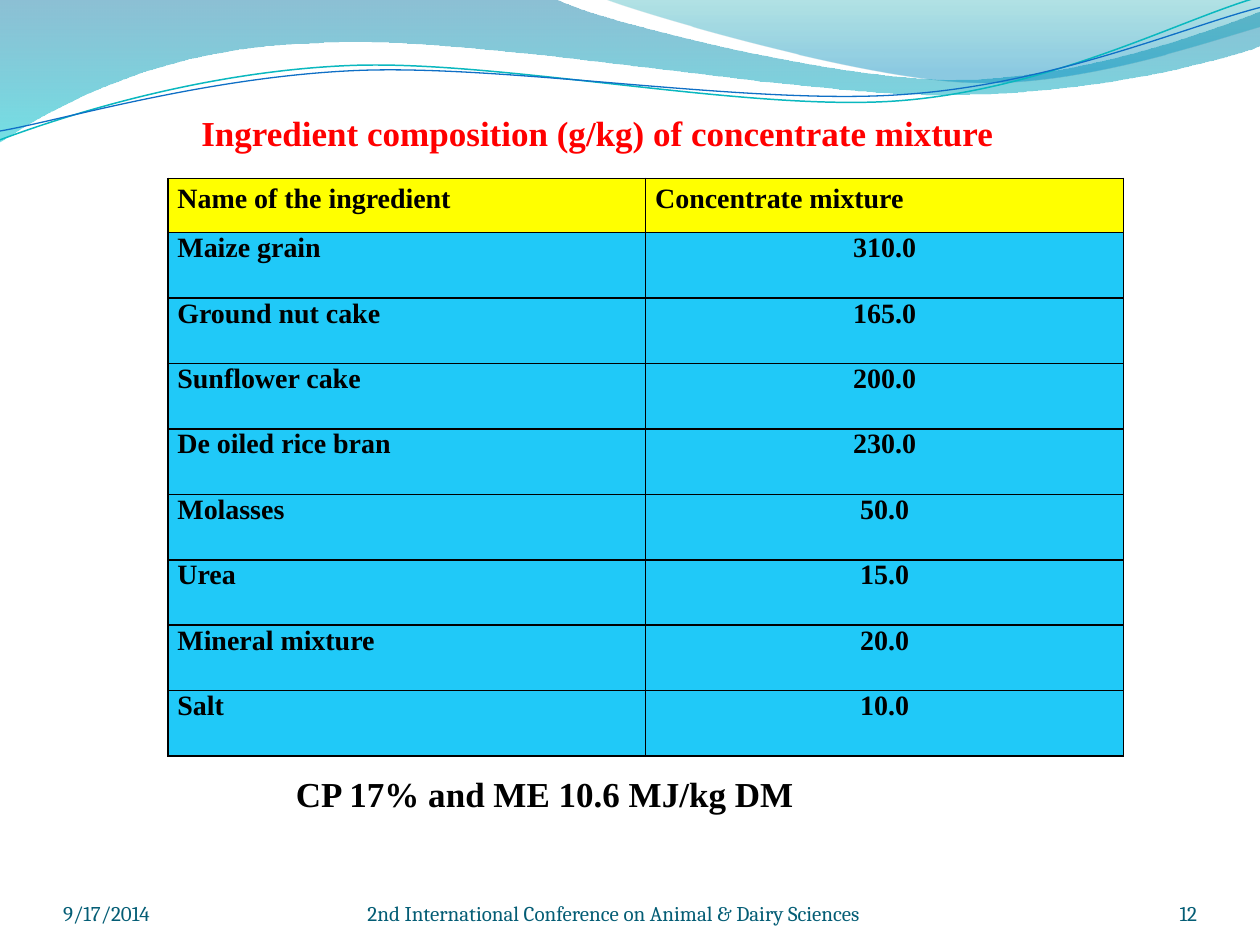
import math

from lxml import etree
from pptx import Presentation
from pptx import util as u
from pptx.dml.color import RGBColor
from pptx.enum import text
from pptx.oxml import ns

CELL = u.Inches(1) // 12
BLACK = RGBColor(0x00, 0x00, 0x00)
RED = RGBColor(0xFF, 0x00, 0x00)
YELLOW = RGBColor(0xFF, 0xFF, 0x00)
SKY = RGBColor(0x20, 0xC9, 0xF8)
FOOTER_BLUE = RGBColor(0x04, 0x5D, 0x75)
OCEAN = RGBColor(0x00, 0x74, 0xA1)
AQUA = RGBColor(0x00, 0xC6, 0xCF)
TEAL = RGBColor(0x00, 0xA1, 0xA9)
AZURE = RGBColor(0x00, 0x8B, 0xBF)
LINE_TEAL = RGBColor(0x0A, 0xB8, 0xBF)
LINE_BLUE = RGBColor(0x0F, 0x6F, 0xC6)
SERIF = "Times New Roman"
ALIGN = text.PP_ALIGN
TILT = -2.7

BANDS = [
    ([(0, 0), (4.4, -0.01),
      (4.76, 0.17, 6.64, 0.63, 7.58, 0.63), (8.53, 0.63, 9.58, 0.26, 10, 0.09),
      (10.01, 0.36),
      (9.83, 0.44, 8.7, 0.76, 7.46, 0.75), (6.22, 0.75, 3.82, 0.28, 2.57, 0.34),
      (1.29, 0.36, 0.46, 0.83, -0.01, 1.13), (0, 0)],
     [(0, OCEAN, 45), (1, AQUA, 55)]),
    ([(4.79, -0.01),
      (5.09, 0.11, 6.82, 0.62, 7.69, 0.65), (8.56, 0.69, 9.61, 0.32, 10, 0.21),
      (10, 0), (4.79, -0.01)],
     [(0, TEAL, 30), (0.8, AZURE, 45)]),
]
STRANDS = [
    ([(0, 1.11), (0.48, 0.93, 1.58, 0.57, 2.77, 0.52),
      (3.95, 0.47, 5.93, 0.89, 7.13, 0.8), (8.33, 0.71, 9.38, 0.15, 9.98, -0.02)],
     (4.99, 0.58), LINE_TEAL, 0.85),
    ([(0, 1.04), (0.47, 0.96, 1.64, 0.61, 2.83, 0.56),
      (4.03, 0.51, 5.97, 0.84, 7.17, 0.75), (8.36, 0.67, 9.41, 0.21, 10, 0.06)],
     (5, 0.59), LINE_BLUE, 0.75),
]
HEADINGS = ("Name of the ingredient", "Concentrate mixture")
INGREDIENTS = [
    ("Maize grain", "310.0"), ("Ground nut cake", "165.0"),
    ("Sunflower cake", "200.0"), ("De oiled rice bran", "230.0"),
    ("Molasses", "50.0"), ("Urea", "15.0"),
    ("Mineral mixture", "20.0"), ("Salt", "10.0"),
]


def grid(*cells):
    """Turn grid columns and rows into slide lengths."""
    return [u.Emu(round(n * CELL)) for n in cells]


def turn(outline, pivot, degrees):
    """Rotate every point of an outline clockwise about a pivot."""
    cos, sin = math.cos(math.radians(degrees)), math.sin(math.radians(degrees))
    turned = []
    for part in outline:
        offsets = [(x - pivot[0], y - pivot[1]) for x, y in zip(part[::2], part[1::2])]
        turned.append([n for x, y in offsets for n in
                       (pivot[0] + x * cos - y * sin, pivot[1] + x * sin + y * cos)])
    return turned


def add_outline(slide, box, outline, close):
    """Draw corners and cubic curves measured in tenths of the box width."""
    left, top, width, _ = box
    points = [(round(left + x * width / 10), round(top + y * width / 10))
              for part in outline for x, y in zip(part[::2], part[1::2])]
    builder = slide.shapes.build_freeform(*points[0])
    builder.add_line_segments(points[1:], close=close)
    shape = builder.convert_to_shape()
    shape.shadow.inherit = False
    segments = iter(list(shape.element.iter(ns.qn("a:lnTo"))))
    for part in outline[1:]:
        first = next(segments)
        if len(part) == 6:
            first.tag = ns.qn("a:cubicBezTo")
            for bend in (next(segments), next(segments)):
                first.append(bend[0])
                bend.getparent().remove(bend)
    return shape


def add_waves(slide, box):
    """Place the tinted bands and thin strands across the top."""
    for outline, stops in BANDS:
        band = add_outline(slide, box, outline, True)
        band.line.fill.background()
        band.fill.gradient()
        band.fill.gradient_angle = 270
        for stop, (position, color, _) in zip(band.fill.gradient_stops, stops):
            stop.position = position
            stop.color.rgb = color
        for tint, (_, _, opacity) in zip(band.element.spPr.iter(ns.qn("a:srgbClr")), stops):
            etree.SubElement(tint, ns.qn("a:alpha"), val=str(opacity * 1000))
    for outline, pivot, color, weight in STRANDS:
        strand = add_outline(slide, box, turn(outline, pivot, -TILT), False)
        strand.rotation = TILT
        strand.fill.background()
        strand.line.color.rgb = color
        strand.line.width = u.Pt(weight)


def write(frame, words, size, color, font=SERIF, bold=True, align=ALIGN.LEFT):
    """Fill a text frame with one styled paragraph."""
    frame.text = words
    paragraph = frame.paragraphs[0]
    paragraph.alignment = align
    style = paragraph.runs[0].font
    style.name, style.size, style.bold = font, u.Pt(size), bold
    style.color.rgb = color
    return paragraph


def add_caption(slide, box, words, color):
    """Place a bold line of text above or below the table."""
    frame = slide.shapes.add_textbox(*box).text_frame
    frame.word_wrap = True
    frame.auto_size = text.MSO_AUTO_SIZE.SHAPE_TO_FIT_TEXT
    write(frame, words, 20, color)


def add_border(cell):
    """Draw a thin black line on every side of a cell."""
    for side in ("a:lnL", "a:lnR", "a:lnT", "a:lnB"):
        line = etree.SubElement(cell._tc.get_or_add_tcPr(), ns.qn(side), w=str(u.Pt(1)))
        fill = etree.SubElement(line, ns.qn("a:solidFill"))
        etree.SubElement(fill, ns.qn("a:srgbClr"), val=str(BLACK))


def add_ingredients(slide, box, header_height):
    """Place the ingredient table with equal columns and body rows."""
    rows = [HEADINGS, *INGREDIENTS]
    table = slide.shapes.add_table(len(rows), len(HEADINGS), *box).table
    body_height = (box[3] - header_height) // len(INGREDIENTS)
    for r, row in enumerate(rows):
        table.rows[r].height = body_height if r else header_height
        for c, words in enumerate(row):
            cell = table.cell(r, c)
            add_border(cell)
            cell.fill.solid()
            cell.fill.fore_color.rgb = SKY if r else YELLOW
            cell.margin_left = cell.margin_right = u.Pt(5.4)
            cell.margin_top = cell.margin_bottom = 0
            align = (ALIGN.JUSTIFY, ALIGN.CENTER)[c] if r else ALIGN.LEFT
            paragraph = write(cell.text_frame, words, 16, BLACK, align=align)
            paragraph.space_after = u.Pt(10)
            if r == 0:
                paragraph.line_spacing = 1.15


def add_footer(slide, box):
    """Place the date, event and page number along the bottom."""
    left, top, _, height = box
    for column, span, words, align in (
            (0, 28, "9/17/2014", ALIGN.LEFT),
            (29, 55, "2nd International Conference on Animal & Dairy Sciences", ALIGN.LEFT),
            (98, 10, "12", ALIGN.RIGHT)):
        offset, width = grid(column, span)
        frame = slide.shapes.add_textbox(left + offset, top, width, height).text_frame
        frame.word_wrap = True
        frame.vertical_anchor = text.MSO_ANCHOR.BOTTOM
        frame.margin_left = frame.margin_right = frame.margin_top = frame.margin_bottom = 0
        write(frame, words, 12, FOOTER_BLUE, "Cambria", False, align)


def main():
    """Build the slide and save it."""
    deck = Presentation()
    deck.slide_width, deck.slide_height = grid(120, 90)
    slide = deck.slides.add_slide(deck.slide_layouts[6])
    add_waves(slide, grid(0, 0, 120, 14))
    add_ingredients(slide, grid(16, 17, 91, 55.03), grid(5.16)[0])
    add_caption(slide, grid(18, 10, 85, 5.25),
                "Ingredient composition (g/kg) of concentrate mixture", RED)
    add_caption(slide, grid(27, 73, 67, 5.25), "CP 17% and ME 10.6 MJ/kg DM", BLACK)
    add_footer(slide, grid(6, 83.4, 108, 4.8))
    deck.save("out.pptx")


if __name__ == "__main__":
    main()
